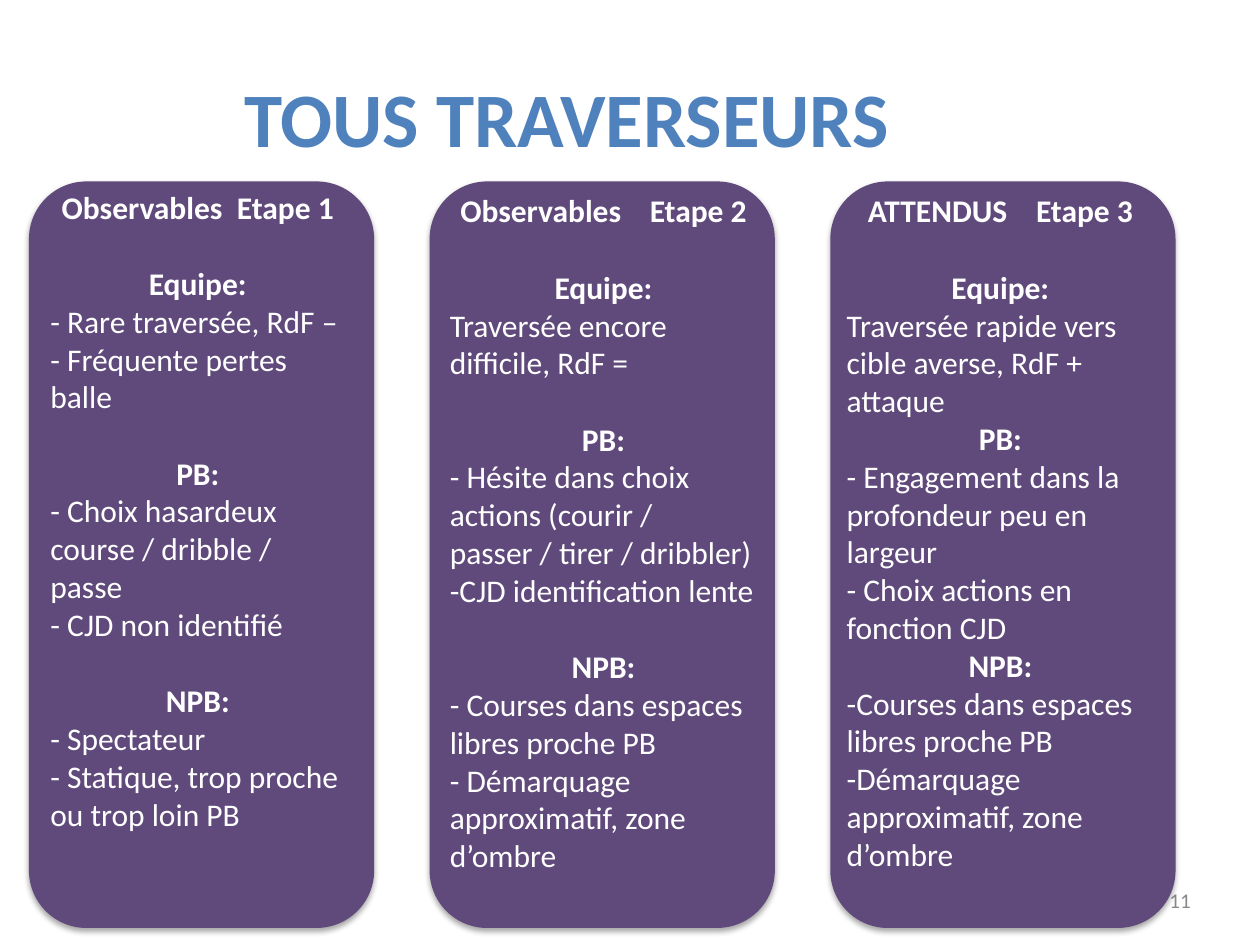
from dataclasses import dataclass

import pptx
import pptx.dml.color
import pptx.enum.shapes
import pptx.enum.text
import pptx.oxml
import pptx.oxml.ns
import pptx.util
from pptx.enum.text import MSO_ANCHOR, PP_ALIGN

SLIDE_WIDTH = pptx.util.Inches(10)
SLIDE_HEIGHT = pptx.util.Inches(7.5)


@dataclass(frozen=True)
class Theme:
    font: str = "Calibri"
    title_color: str = "4F81BD"
    panel_color: str = "604A7B"
    text_color: str = "FFFFFF"
    number_color: str = "888888"
    title_size: float = 44
    body_size: float = 18
    number_size: float = 12
    line_height: float = 22
    space_width: float = 4.07
    inset: float = 0.05


@dataclass(frozen=True)
class Box:
    """A rectangle in shares of the slide's width and height."""
    left: float
    top: float
    width: float
    height: float

    def lengths(self) -> tuple[int, int, int, int]:
        return (int(self.left * SLIDE_WIDTH), int(self.top * SLIDE_HEIGHT),
                int(self.width * SLIDE_WIDTH), int(self.height * SLIDE_HEIGHT))


@dataclass(frozen=True)
class Section:
    heading: str
    lines: tuple[str, ...]
    gap_before: bool = True


@dataclass(frozen=True)
class Panel:
    label: str
    stage: str
    label_gap: int  # width between label and stage, in spaces
    text_box: Box
    sections: tuple[Section, ...]


THEME = Theme()
TITLE_BOX = Box(0, 0.04, 0.9, 1 / 6)
NUMBER_BOX = Box(0.922, 0.933, 0.028, 0.039)
PANEL_LEFT, PANEL_PITCH = 0.023, 0.318
PANEL_TOP, PANEL_WIDTH, PANEL_HEIGHT = 0.192, 0.274, 0.79

PANELS = (
    Panel("Observables", "Etape 1", 2, Box(0.035, 0.192, 0.244, 0.74), (
        Section("Equipe:", ("- Rare traversée, RdF –", "- Fréquente pertes balle")),
        Section("PB:", ("- Choix hasardeux course / dribble / passe",
                        "- CJD non identifié")),
        Section("NPB:", ("- Spectateur", "- Statique, trop proche ou trop loin PB")),
    )),
    Panel("Observables", "Etape 2", 4, Box(0.352, 0.196, 0.254, 0.74), (
        Section("Equipe:", ("Traversée encore difficile, RdF =",)),
        Section("PB:", ("- Hésite dans choix actions (courir / passer / tirer / dribbler)",
                        "-CJD identification lente")),
        Section("NPB:", ("- Courses dans espaces libres proche PB",
                         "- Démarquage approximatif, zone d’ombre")),
    )),
    Panel("ATTENDUS", "Etape 3", 4, Box(0.667, 0.196, 0.254, 0.78), (
        Section("Equipe:", ("Traversée rapide vers cible averse, RdF + attaque",)),
        Section("PB:", ("- Engagement dans la profondeur peu en largeur",
                        "- Choix actions en fonction CJD"), gap_before=False),
        Section("NPB:", ("-Courses dans espaces libres proche PB",
                         "-Démarquage approximatif, zone d’ombre"), gap_before=False),
    )),
)


def rgb(color: str) -> pptx.dml.color.RGBColor:
    return pptx.dml.color.RGBColor.from_string(color)


def format_frame(frame, anchor: MSO_ANCHOR, wrap: bool = True) -> None:
    frame.word_wrap = wrap
    frame.auto_size = pptx.enum.text.MSO_AUTO_SIZE.NONE
    frame.vertical_anchor = anchor
    inset = pptx.util.Inches(THEME.inset)
    frame.margin_left = frame.margin_right = inset
    frame.margin_top = frame.margin_bottom = inset


def format_paragraph(paragraph, size: float, color: str, bold: bool,
                     alignment: PP_ALIGN, gap: float = 0) -> None:
    paragraph.alignment = alignment
    paragraph.space_before = pptx.util.Pt(gap)
    font = paragraph.font
    font.name, font.size, font.bold = THEME.font, pptx.util.Pt(size), bold
    font.color.rgb = rgb(color)


def add_soft_shadow(shape) -> None:
    effects = pptx.oxml.parse_xml(
        f'<a:effectLst {pptx.oxml.ns.nsdecls("a")}>'
        '<a:outerShdw blurRad="38100" dist="22860" dir="5400000" rotWithShape="0">'
        '<a:srgbClr val="000000"><a:alpha val="35000"/></a:srgbClr>'
        '</a:outerShdw></a:effectLst>')
    shape.shadow.inherit = False
    properties = shape.fill._xPr
    properties.replace(properties.find(pptx.oxml.ns.qn("a:effectLst")), effects)


def add_panel_heading(paragraph, panel: Panel) -> None:
    """Write label and stage, parted by one space widened to label_gap spaces."""
    paragraph.add_run().text = panel.label
    space = paragraph.add_run()
    space.text = " "
    extra = (panel.label_gap - 1) * THEME.space_width
    space._r.get_or_add_rPr().set("spc", str(round(extra * 100)))
    paragraph.add_run().text = panel.stage
    format_paragraph(paragraph, THEME.body_size, THEME.text_color, True, PP_ALIGN.CENTER)


def add_panel(slide, column: int, panel: Panel) -> None:
    box = Box(PANEL_LEFT + column * PANEL_PITCH, PANEL_TOP, PANEL_WIDTH, PANEL_HEIGHT)
    shape = slide.shapes.add_shape(
        pptx.enum.shapes.MSO_SHAPE.ROUNDED_RECTANGLE, *box.lengths())
    shape.fill.solid()
    shape.fill.fore_color.rgb = rgb(THEME.panel_color)
    shape.line.fill.background()
    add_soft_shadow(shape)

    frame = slide.shapes.add_textbox(*panel.text_box.lengths()).text_frame
    format_frame(frame, MSO_ANCHOR.TOP)
    add_panel_heading(frame.paragraphs[0], panel)
    for section in panel.sections:
        heading = frame.add_paragraph()
        heading.text = section.heading
        format_paragraph(heading, THEME.body_size, THEME.text_color, True, PP_ALIGN.CENTER,
                         THEME.line_height if section.gap_before else 0)
        for line in section.lines:
            paragraph = frame.add_paragraph()
            paragraph.text = line
            format_paragraph(paragraph, THEME.body_size, THEME.text_color, False,
                             PP_ALIGN.LEFT)


def add_title(slide) -> None:
    title = slide.shapes.title
    title.left, title.top, title.width, title.height = TITLE_BOX.lengths()
    title.text_frame.text = "TOUS TRAVERSEURS"
    format_frame(title.text_frame, MSO_ANCHOR.MIDDLE)
    format_paragraph(title.text_frame.paragraphs[0], THEME.title_size, THEME.title_color,
                     True, PP_ALIGN.CENTER)


def add_slide_number(slide) -> None:
    frame = slide.shapes.add_textbox(*NUMBER_BOX.lengths()).text_frame
    frame.text = "11"
    format_frame(frame, MSO_ANCHOR.MIDDLE, wrap=False)
    format_paragraph(frame.paragraphs[0], THEME.number_size, THEME.number_color,
                     False, PP_ALIGN.RIGHT)


def main() -> None:
    presentation = pptx.Presentation()
    presentation.slide_width, presentation.slide_height = SLIDE_WIDTH, SLIDE_HEIGHT
    slide = presentation.slides.add_slide(presentation.slide_layouts.get_by_name("Title Only"))
    add_slide_number(slide)
    add_title(slide)
    for column, panel in enumerate(PANELS):
        add_panel(slide, column, panel)
    presentation.save("out.pptx")


if __name__ == "__main__":
    main()
